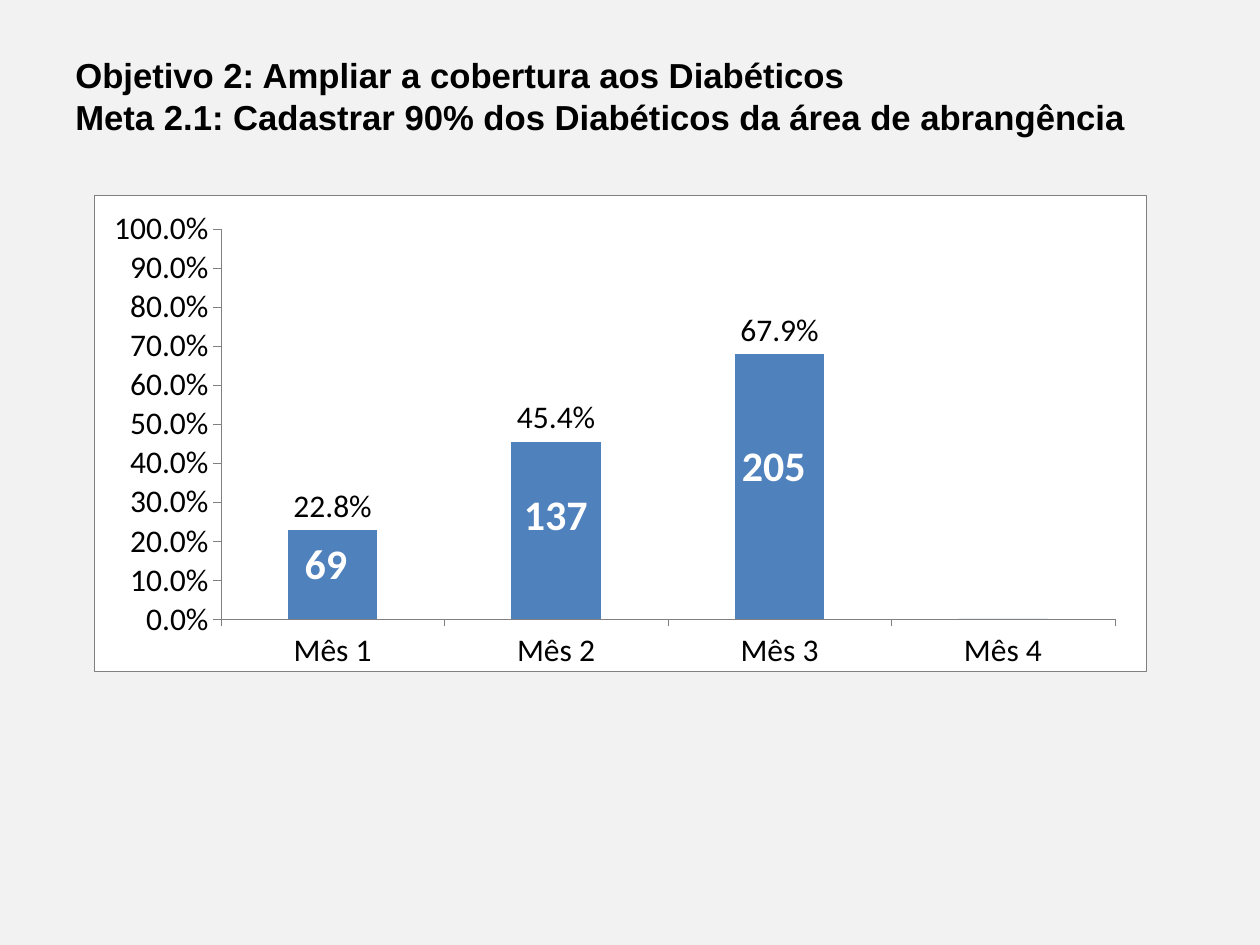
from lxml.etree import fromstring
from pptx import Presentation
from pptx.chart.data import CategoryChartData
from pptx.dml.color import RGBColor
from pptx.enum.chart import XL_CHART_TYPE as ChartType
from pptx.enum.chart import XL_LABEL_POSITION as LabelPosition
from pptx.enum.chart import XL_TICK_MARK as TickMark
from pptx.enum.text import MSO_ANCHOR as Anchor
from pptx.oxml.ns import nsdecls, qn
from pptx.util import Inches, Pt

COLORS = {
    "background": "F2F2F2",
    "text": "000000",
    "bar": "4F81BD",
    "line": "808080",
    "white": "FFFFFF",
}
PERCENT = "0.0%"


def rgb(name):
    return RGBColor.from_string(COLORS[name])


class SlideBuilder:
    """Holds the fonts and the slide being filled."""

    title_font = "Arial"
    body_font = "Calibri"

    def __init__(self, slide):
        self.slide = slide
        fill = slide.background.fill
        fill.solid()
        fill.fore_color.rgb = rgb("background")

    def add_text(self, lines, box, font, size, color, top_inset=0.05):
        shape = self.slide.shapes.add_textbox(*map(Inches, box))
        frame = shape.text_frame
        frame.word_wrap = True
        frame.vertical_anchor = Anchor.TOP
        frame.margin_top = Inches(top_inset)
        frame.text = "\n".join(lines)
        for paragraph in frame.paragraphs:
            for run in paragraph.runs:
                run.font.name = font
                run.font.size = Pt(size)
                run.font.bold = True
                run.font.color.rgb = rgb(color)

    def add_column_chart(self, categories, values, box, plot_box):
        data = CategoryChartData(number_format=PERCENT)
        data.categories = categories
        data.add_series("Series 1", values)
        chart = self.slide.shapes.add_chart(
            ChartType.COLUMN_CLUSTERED, *map(Inches, box), data
        ).chart
        chart.has_legend = False
        chart.has_title = False
        chart.font.name = self.body_font
        chart.font.size = Pt(18)
        chart.font.color.rgb = rgb("text")

        for axis in (chart.category_axis, chart.value_axis):
            axis.has_major_gridlines = False
            axis.major_tick_mark = TickMark.OUTSIDE
            axis.minor_tick_mark = TickMark.NONE
            axis.format.line.color.rgb = rgb("line")
            axis.format.line.width = Pt(0.25)
        value_axis = chart.value_axis
        value_axis.minimum_scale = 0
        value_axis.maximum_scale = 1
        value_axis.major_unit = 0.1
        value_axis.tick_labels.number_format = PERCENT
        value_axis.tick_labels.number_format_is_linked = False

        plot = chart.plots[0]
        plot.gap_width = 150
        plot.vary_by_categories = False
        series = plot.series[0]
        series.format.fill.solid()
        series.format.fill.fore_color.rgb = rgb("bar")
        labels = series.data_labels
        labels.show_value = True
        labels.number_format = PERCENT
        labels.number_format_is_linked = False
        labels.position = LabelPosition.OUTSIDE_END

        self.hide_zero_labels(chart, values)
        self.place_plot(chart, plot_box)
        self.frame_chart(chart)

    def hide_zero_labels(self, chart, values):
        labels = chart.element.find(".//" + qn("c:ser") + "/" + qn("c:dLbls"))
        zeros = [index for index, value in enumerate(values) if value == 0]
        for position, index in enumerate(zeros):
            labels.insert(position, fromstring(
                f'<c:dLbl {nsdecls("c")}><c:idx val="{index}"/>'
                '<c:delete val="1"/></c:dLbl>'
            ))

    def place_plot(self, chart, plot_box):
        """Fix the inner plot area, in fractions of the chart's size."""
        plot_area = chart.element.find(".//" + qn("c:plotArea"))
        for layout in plot_area.findall(qn("c:layout")):
            plot_area.remove(layout)
        sizes = "".join(
            f'<c:{key} val="{value}"/>' for key, value in zip("xywh", plot_box)
        )
        plot_area.insert(0, fromstring(
            f'<c:layout {nsdecls("c")}><c:manualLayout>'
            '<c:layoutTarget val="inner"/><c:xMode val="edge"/>'
            f'<c:yMode val="edge"/>{sizes}</c:manualLayout></c:layout>'
        ))

    def frame_chart(self, chart):
        chart.element.find(qn("c:chart")).addnext(fromstring(
            f'<c:spPr {nsdecls("c", "a")}>'
            f'<a:solidFill><a:srgbClr val="{COLORS["white"]}"/></a:solidFill>'
            f'<a:ln w="{Pt(0.25)}"><a:solidFill>'
            f'<a:srgbClr val="{COLORS["line"]}"/></a:solidFill></a:ln></c:spPr>'
        ))


def main():
    presentation = Presentation()
    presentation.slide_width = Inches(10)
    presentation.slide_height = Inches(7.5)
    builder = SlideBuilder(
        presentation.slides.add_slide(presentation.slide_layouts[6])
    )

    builder.add_text(
        [
            "Objetivo 2: Ampliar a cobertura aos Diabéticos",
            "Meta 2.1: Cadastrar 90% dos Diabéticos da área de abrangência",
        ],
        (0.5, 0.3, 9, 1.25), builder.title_font, 19.8, "text", top_inset=0.13,
    )
    builder.add_column_chart(
        [f"Mês {month}" for month in range(1, 5)],
        [0.228, 0.454, 0.679, 0],
        (0.75, 1.55, 8.35, 3.78),
        (0.12, 0.07, 0.85, 0.82),
    )
    patient_counts = [("205", 5.79, 3.44), ("137", 4.06, 3.83), ("69", 2.32, 4.22)]
    for count, left, top in patient_counts:
        builder.add_text(
            [count], (left, top, 0.79, 0.5), builder.body_font, 24, "white"
        )

    presentation.save("out.pptx")


if __name__ == "__main__":
    main()
